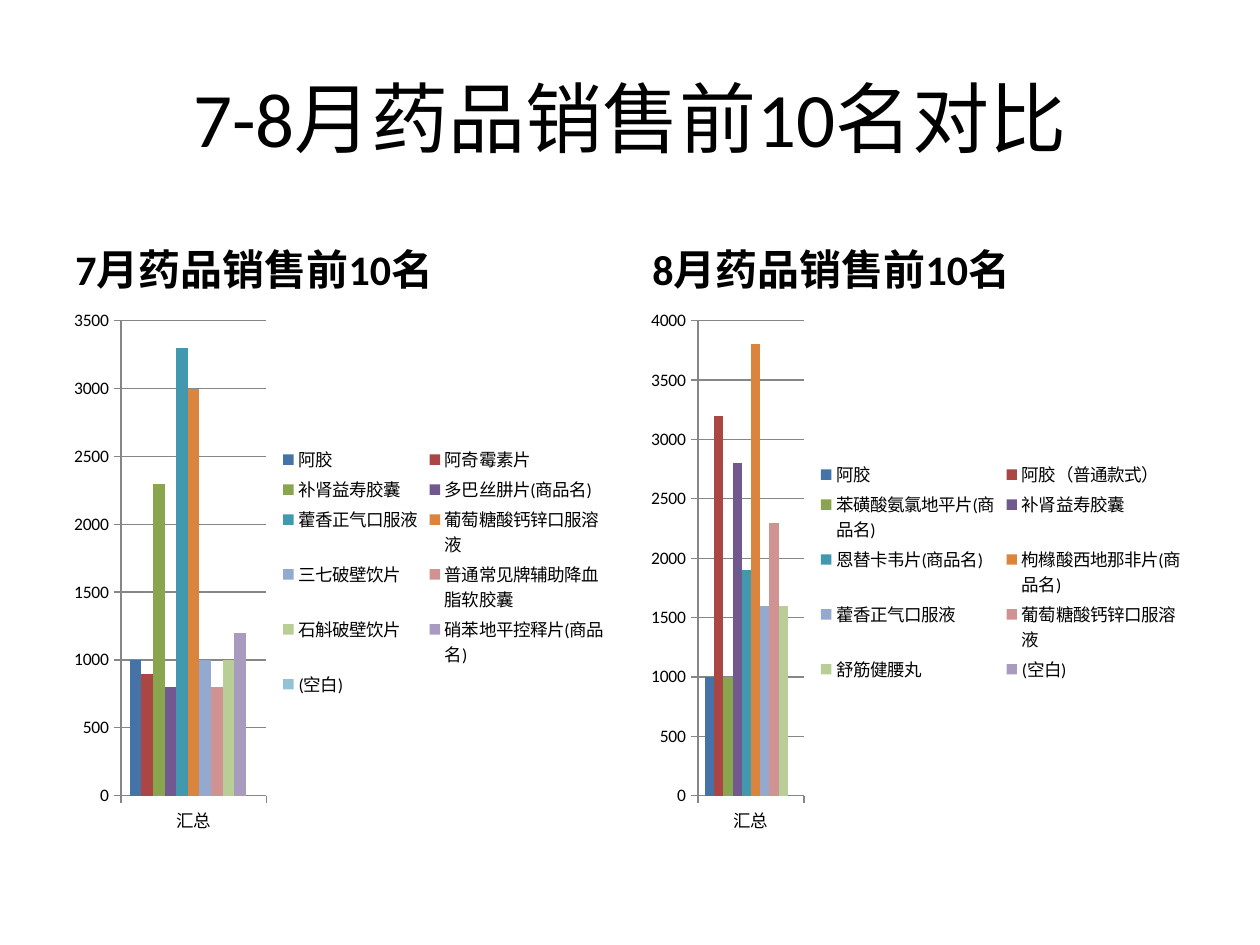
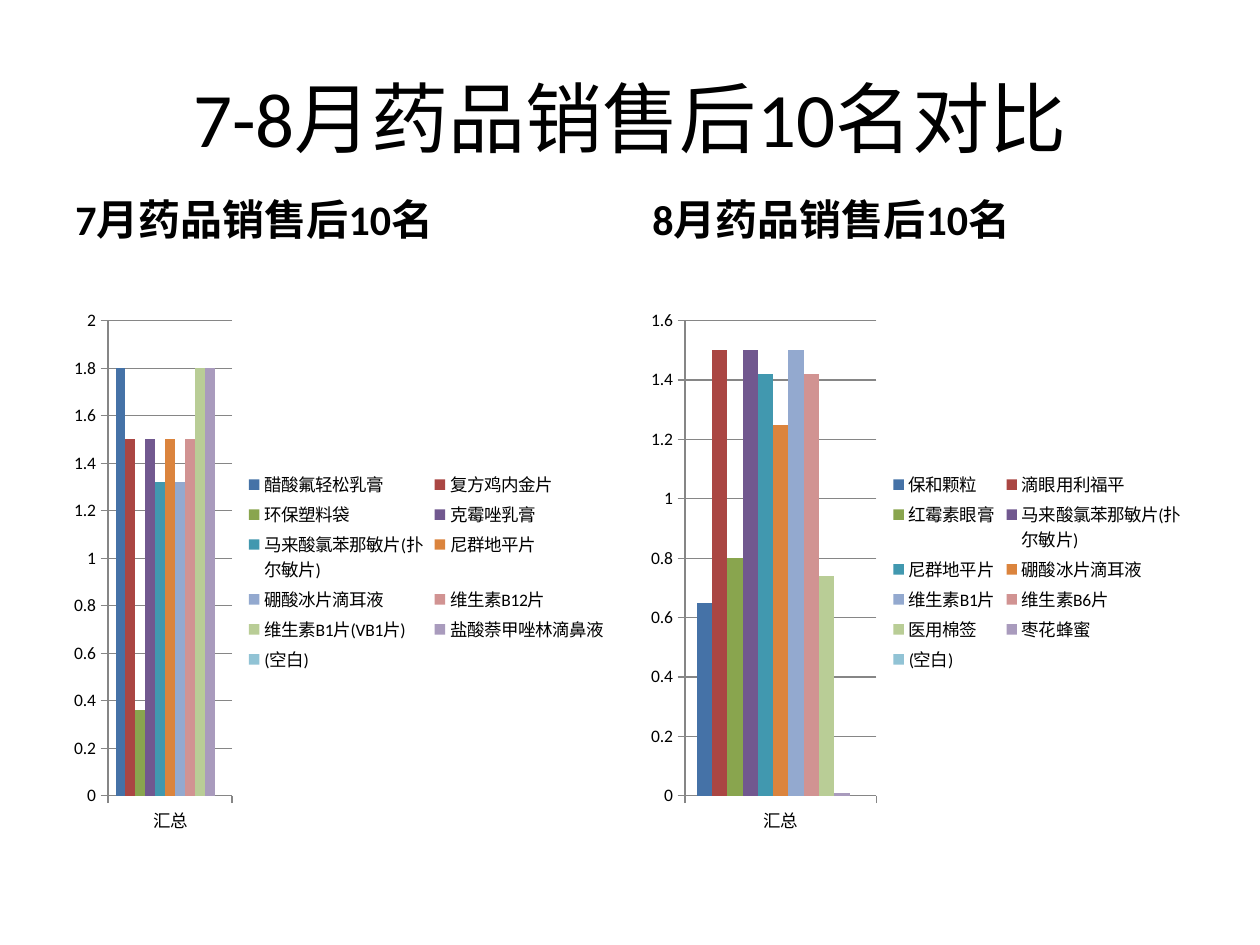
import pptx
import pptx.chart.data
import pptx.dml.color
import pptx.enum.chart
import pptx.enum.text
import pptx.util

PX = 914400 // 126
FONT = "Calibri"
COLORS = {"text": "000000", "axis": "868686", "background": "FFFFFF"}
SERIES_COLORS = ["4572A7", "AA4643", "89A54E", "71588F", "4198AF", "DB843D",
                 "93A9CF", "D19392", "B9CD96", "A99BBD", "91C3D5"]
CATEGORY = "汇总"

COMPARISONS = [
    {
        "title": "7-8月药品销售前10名对比",
        "heading_top": 212,
        "months": [
            {
                "heading": "7月药品销售前10名", "max": 3500, "step": 500,
                "sales": [
                    ("阿胶", 1000), ("阿奇霉素片", 900), ("补肾益寿胶囊", 2300),
                    ("多巴丝肼片(商品名)", 800), ("藿香正气口服液", 3300),
                    ("葡萄糖酸钙锌口服溶液", 3000), ("三七破壁饮片", 1000),
                    ("普通常见牌辅助降血脂软胶囊", 800), ("石斛破壁饮片", 1000),
                    ("硝苯地平控释片(商品名)", 1200), ("(空白)", None),
                ],
            },
            {
                "heading": "8月药品销售前10名", "max": 4000, "step": 500,
                "sales": [
                    ("阿胶", 1000), ("阿胶（普通款式）", 3200),
                    ("苯磺酸氨氯地平片(商品名)", 1000), ("补肾益寿胶囊", 2800),
                    ("恩替卡韦片(商品名)", 1900), ("枸橼酸西地那非片(商品名)", 3800),
                    ("藿香正气口服液", 1600), ("葡萄糖酸钙锌口服溶液", 2300),
                    ("舒筋健腰丸", 1600), ("(空白)", None),
                ],
            },
        ],
    },
    {
        "title": "7-8月药品销售后10名对比",
        "heading_top": 162,
        "months": [
            {
                "heading": "7月药品销售后10名", "max": 2, "step": 0.2,
                "sales": [
                    ("醋酸氟轻松乳膏", 1.8), ("复方鸡内金片", 1.5),
                    ("环保塑料袋", 0.36), ("克霉唑乳膏", 1.5),
                    ("马来酸氯苯那敏片(扑尔敏片)", 1.32), ("尼群地平片", 1.5),
                    ("硼酸冰片滴耳液", 1.32), ("维生素B12片", 1.5),
                    ("维生素B1片(VB1片)", 1.8), ("盐酸萘甲唑林滴鼻液", 1.8),
                    ("(空白)", None),
                ],
            },
            {
                "heading": "8月药品销售后10名", "max": 1.6, "step": 0.2,
                "sales": [
                    ("保和颗粒", 0.65), ("滴眼用利福平", 1.5), ("红霉素眼膏", 0.8),
                    ("马来酸氯苯那敏片(扑尔敏片)", 1.5), ("尼群地平片", 1.42),
                    ("硼酸冰片滴耳液", 1.25), ("维生素B1片", 1.5),
                    ("维生素B6片", 1.42), ("医用棉签", 0.74), ("枣花蜂蜜", 0.01),
                    ("(空白)", None),
                ],
            },
        ],
    },
]

SLIDE_WIDTH, SLIDE_HEIGHT = 1260, 945
MARGIN, GUTTER = 63, 20
CONTENT_WIDTH = SLIDE_WIDTH - 2 * MARGIN
COLUMN_WIDTH = (CONTENT_WIDTH - GUTTER) // 2
TITLE_TOP, TITLE_HEIGHT = 38, 158
HEADING_HEIGHT = 88
CHART_TOP, CHART_HEIGHT = 300, 544


def rgb(name):
    return pptx.dml.color.RGBColor.from_string(COLORS.get(name, name))


def emu(*lengths):
    return [pptx.util.Emu(length * PX) for length in lengths]


def style_font(font, size, bold=False):
    font.name = FONT
    font.size = pptx.util.Pt(size)
    font.bold = bold
    font.color.rgb = rgb("text")


def add_text(slide, text, box, size, anchor, align, bold=False):
    frame = slide.shapes.add_textbox(*emu(*box)).text_frame
    frame.word_wrap = True
    frame.vertical_anchor = anchor
    paragraph = frame.paragraphs[0]
    paragraph.alignment = align
    run = paragraph.add_run()
    run.text = text
    style_font(run.font, size, bold)


def style_axis_line(line):
    line.color.rgb = rgb("axis")
    line.width = pptx.util.Pt(0.75)


def add_sales_chart(slide, month, left):
    sales = pptx.chart.data.CategoryChartData()
    sales.categories = [CATEGORY]
    for drug, amount in month["sales"]:
        sales.add_series(drug, [amount])
    chart = slide.shapes.add_chart(
        pptx.enum.chart.XL_CHART_TYPE.COLUMN_CLUSTERED,
        *emu(left, CHART_TOP, COLUMN_WIDTH, CHART_HEIGHT), sales).chart
    style_font(chart.font, 10)
    chart.has_title = False
    chart.has_legend = True
    chart.legend.position = pptx.enum.chart.XL_LEGEND_POSITION.RIGHT
    chart.legend.include_in_layout = False

    plot = chart.plots[0]
    plot.gap_width = 150
    plot.vary_by_categories = False
    for series, color in zip(plot.series, SERIES_COLORS):
        series.format.fill.solid()
        series.format.fill.fore_color.rgb = rgb(color)
        series.invert_if_negative = False

    for axis in (chart.category_axis, chart.value_axis):
        axis.major_tick_mark = pptx.enum.chart.XL_TICK_MARK.OUTSIDE
        axis.minor_tick_mark = pptx.enum.chart.XL_TICK_MARK.NONE
        style_axis_line(axis.format.line)
    amounts = chart.value_axis
    amounts.minimum_scale = 0
    amounts.maximum_scale = month["max"]
    amounts.major_unit = month["step"]
    amounts.has_major_gridlines = True
    style_axis_line(amounts.major_gridlines.format.line)


def add_comparison(deck, comparison):
    slide = deck.slides.add_slide(deck.slide_layouts[6])
    slide.background.fill.solid()
    slide.background.fill.fore_color.rgb = rgb("background")
    anchors, aligns = pptx.enum.text.MSO_ANCHOR, pptx.enum.text.PP_ALIGN
    add_text(slide, comparison["title"],
             (MARGIN, TITLE_TOP, CONTENT_WIDTH, TITLE_HEIGHT),
             44, anchors.MIDDLE, aligns.CENTER)
    for column, month in enumerate(comparison["months"]):
        left = MARGIN + column * (COLUMN_WIDTH + GUTTER)
        add_text(slide, month["heading"],
                 (left, comparison["heading_top"], COLUMN_WIDTH, HEADING_HEIGHT),
                 24, anchors.BOTTOM, aligns.LEFT, bold=True)
        add_sales_chart(slide, month, left)


def main():
    deck = pptx.Presentation()
    deck.slide_width = pptx.util.Inches(10)
    deck.slide_height = pptx.util.Inches(7.5)
    for comparison in COMPARISONS:
        add_comparison(deck, comparison)
    deck.save("out.pptx")


if __name__ == "__main__":
    main()
